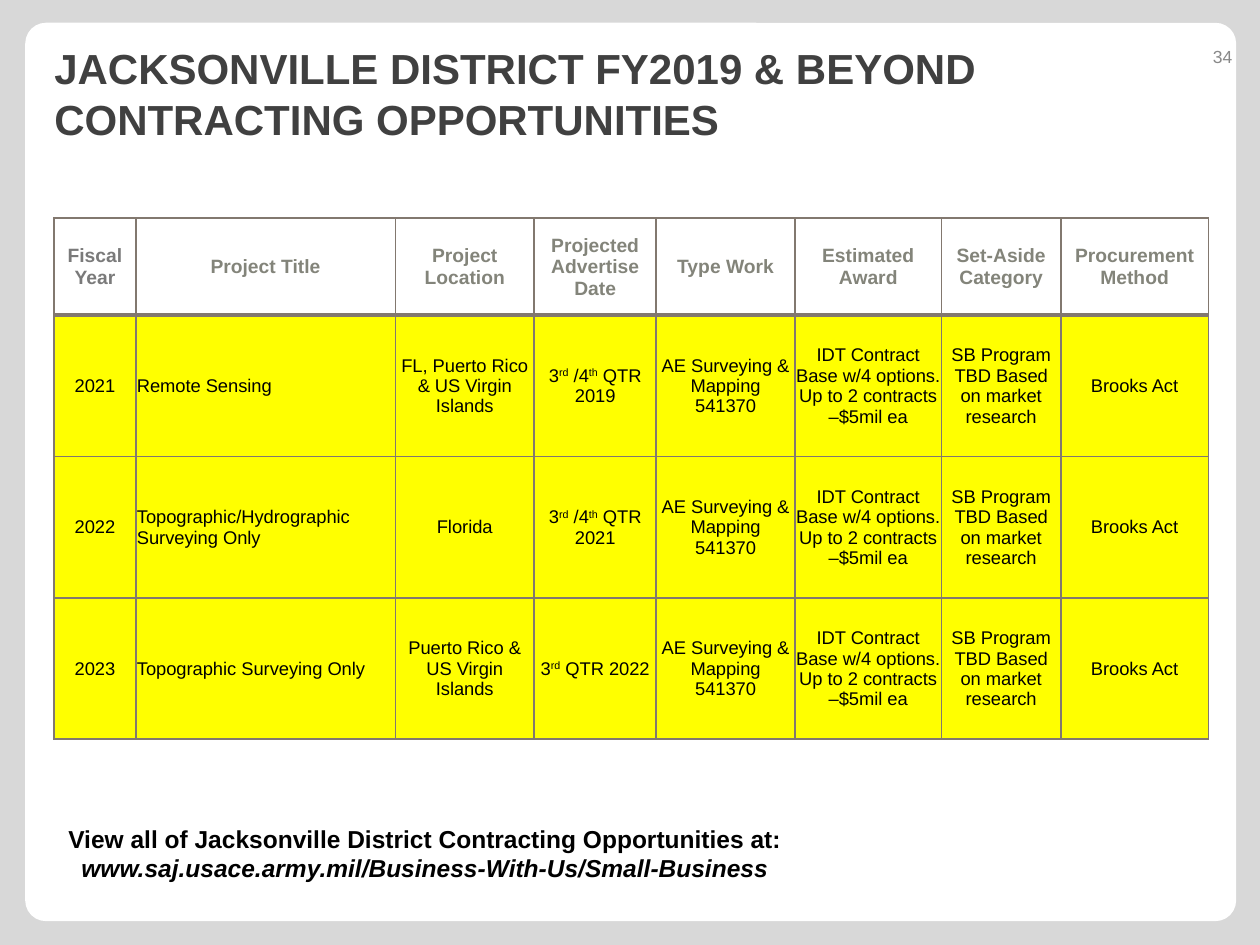
import pptx
import pptx.dml.color
import pptx.enum.shapes
import pptx.enum.text
import pptx.oxml
import pptx.util
from lxml import etree

Cm, Pt = pptx.util.Cm, pptx.util.Pt
RGB = pptx.dml.color.RGBColor.from_string
ALIGN = pptx.enum.text.PP_ALIGN
MIDDLE = pptx.enum.text.MSO_ANCHOR.MIDDLE


class Theme:
    font = "Arial"
    backdrop, panel, highlight, border = "D8D8D8", "FFFFFF", "FFFF00", "82786F"
    title, number, text = "404040", "898989", "000000"
    year_header, header = "7A7A7A", "83847A"
    title_size, number_size, header_size, cell_size, link_size = 24, 10, 11, 10.5, 14


def write(tf, text, size, color, bold=False, italic_last=False, align=ALIGN.LEFT):
    """Fill a text frame: one paragraph a line, with ^marks^ around superscripts."""
    tf.word_wrap = True
    lines = text.split("\n")
    for i, line in enumerate(lines):
        p = tf.paragraphs[0] if i == 0 else tf.add_paragraph()
        p.alignment = align
        for j, part in enumerate(line.split("^")):
            r = p.add_run()
            r.text = part
            r.font.name, r.font.size, r.font.bold = Theme.font, Pt(size), bold
            r.font.color.rgb = RGB(color)
            if italic_last and i == len(lines) - 1:
                r.font.italic = True
            if j % 2:
                r._r.get_or_add_rPr().set("baseline", "30000")


def add_border(cell, side, width):
    ln = etree.SubElement(cell._tc.get_or_add_tcPr(), pptx.oxml.ns.qn(f"a:ln{side}"),
                          w=str(Pt(width)))
    fill = etree.SubElement(ln, pptx.oxml.ns.qn("a:solidFill"))
    etree.SubElement(fill, pptx.oxml.ns.qn("a:srgbClr"), val=Theme.border)


prs = pptx.Presentation()
prs.slide_width, prs.slide_height = Cm(25.4), Cm(19.05)
s = prs.slides.add_slide(prs.slide_layouts[5])
s.background.fill.solid()
s.background.fill.fore_color.rgb = RGB(Theme.backdrop)

# White panel behind everything
panel = s.shapes.add_shape(pptx.enum.shapes.MSO_SHAPE.ROUNDED_RECTANGLE,
                           Cm(0.51), Cm(0.46), Cm(24.41), Cm(18.11))
panel.adjustments[0] = 0.023
panel.shadow.inherit = False
panel.fill.solid()
panel.fill.fore_color.rgb = RGB(Theme.panel)
panel.line.fill.background()
s.shapes._spTree.insert(2, panel._element)

# Title and page number
title = s.shapes.title
title.left, title.top, title.width, title.height = Cm(0.84), Cm(0.76), Cm(23.29), Cm(2.24)
title.text_frame.auto_size = pptx.enum.text.MSO_AUTO_SIZE.NONE
title.text_frame.vertical_anchor = MIDDLE
write(title.text_frame, "JACKSONVILLE DISTRICT FY2019 & BEYOND CONTRACTING OPPORTUNITIES",
      Theme.title_size, Theme.title, bold=True)

number = s.shapes.add_textbox(Cm(23.06), Cm(0.64), Cm(2.03), Cm(1.02))
number.text_frame.vertical_anchor = MIDDLE
write(number.text_frame, "34", Theme.number_size, Theme.number, align=ALIGN.RIGHT)

# Opportunities table
headers = ["Fiscal Year", "Project Title", "Project Location", "Projected Advertise Date",
           "Type Work", "Estimated Award", "Set-Aside Category", "Procurement Method"]
shared = ["AE Surveying & Mapping\n541370",
          "IDT Contract Base w/4 options. Up to 2 contracts –$5mil ea",
          "SB Program TBD Based on market research", "Brooks Act"]
projects = [
    ["2021", "Remote Sensing", "FL, Puerto Rico & US Virgin Islands",
     "3^rd^ /4^th^ QTR 2019"],
    ["2022", "Topographic/Hydrographic Surveying Only", "Florida", "3^rd^ /4^th^ QTR 2021"],
    ["2023", "Topographic Surveying Only", "Puerto Rico & US Virgin Islands",
     "3^rd^ QTR 2022"],
]
rows = [headers] + [project + shared for project in projects]
widths = [1.65, 5.23, 2.8, 2.46, 2.8, 2.95, 2.41, 2.97]
heights = [1.96] + [2.85] * len(projects)

table = s.shapes.add_table(len(rows), len(widths), Cm(1.09), Cm(4.39),
                           Cm(sum(widths)), Cm(sum(heights))).table
table.first_row = table.horz_banding = False
for column, width in zip(table.columns, widths):
    column.width = Cm(width)
for row, height in zip(table.rows, heights):
    row.height = Cm(height)

for i, row in enumerate(rows):
    for j, text in enumerate(row):
        cell = table.cell(i, j)
        cell.vertical_anchor = MIDDLE
        cell.margin_left = cell.margin_right = cell.margin_top = Cm(0.02)
        cell.margin_bottom = 0
        for side in "LRTB":
            under_header = (i, side) in ((0, "B"), (1, "T"))
            add_border(cell, side, 2 if under_header else 1)
        if i == 0:
            cell.fill.background()
            write(cell.text_frame, text, Theme.header_size,
                  Theme.header if j else Theme.year_header, bold=True, align=ALIGN.CENTER)
        else:
            cell.fill.solid()
            cell.fill.fore_color.rgb = RGB(Theme.highlight)
            write(cell.text_frame, text, Theme.cell_size, Theme.text,
                  align=ALIGN.LEFT if j == 1 else ALIGN.CENTER)

# Where to find the full list
link = s.shapes.add_textbox(Cm(1.09), Cm(16.48), Cm(14.96), Cm(1.45))
write(link.text_frame, "View all of Jacksonville District Contracting Opportunities at:\n"
      "www.saj.usace.army.mil/Business-With-Us/Small-Business",
      Theme.link_size, Theme.text, bold=True, italic_last=True, align=ALIGN.CENTER)

prs.save("out.pptx")
